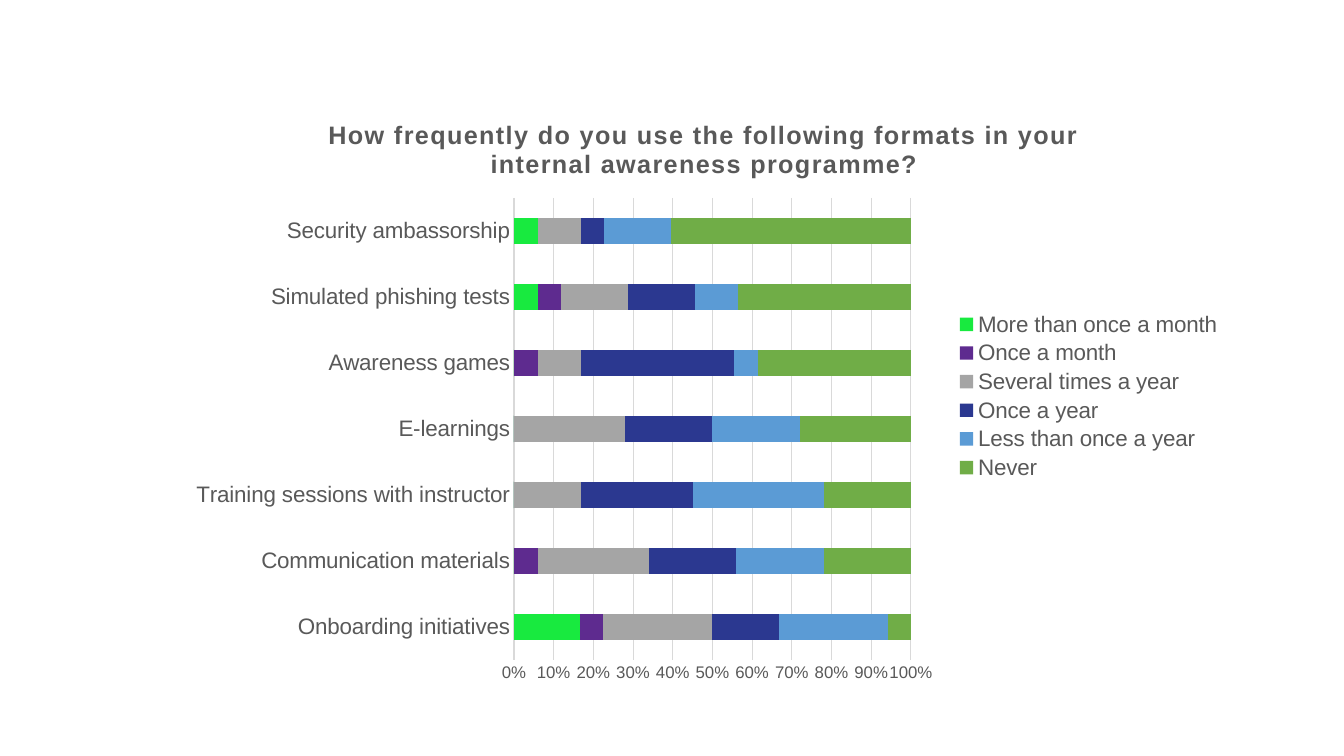
from lxml.etree import SubElement
from pptx import Presentation
from pptx.chart.data import CategoryChartData
from pptx.dml.color import RGBColor
from pptx.enum.chart import XL_CHART_TYPE, XL_LEGEND_POSITION, XL_TICK_MARK
from pptx.oxml.ns import qn
from pptx.util import Pt

GREY_TEXT = RGBColor(0x59, 0x59, 0x59)
GREY_LINE = RGBColor(0xD9, 0xD9, 0xD9)
FONT = "Arial"

QUESTION = "How frequently do you use the following formats in your internal awareness programme?"
FORMATS = [
    "Onboarding initiatives",
    "Communication materials",
    "Training sessions with instructor",
    "E-learnings",
    "Awareness games",
    "Simulated phishing tests",
    "Security ambassorship",
]
FREQUENCIES = [
    ("More than once a month", RGBColor(0x18, 0xEA, 0x3F), (17, 0, 0, 0, 0, 6, 6)),
    ("Once a month", RGBColor(0x5E, 0x2B, 0x8F), (6, 6, 0, 0, 6, 6, 0)),
    ("Several times a year", RGBColor(0xA5, 0xA5, 0xA5), (28, 28, 17, 28, 11, 17, 11)),
    ("Once a year", RGBColor(0x2B, 0x38, 0x90), (17, 22, 28, 22, 39, 17, 6)),
    ("Less than once a year", RGBColor(0x5B, 0x9B, 0xD5), (28, 22, 33, 22, 6, 11, 17)),
    ("Never", RGBColor(0x70, 0xAD, 0x47), (6, 22, 22, 28, 39, 44, 61)),
]

# Lengths in px: left, top, width, height
SLIDE_SIZE = (1344, 756)
CHART_BOX = (175, 97, 1058, 598)
PLOT_BOX = (514, 198, 397, 462)
PX_PER_INCH = 100.8


def px(length):
    return round(length * 914400 / PX_PER_INCH)


def style_font(font, size, color=GREY_TEXT, bold=False):
    font.name = FONT
    font.size = Pt(size)
    font.bold = bold
    font.color.rgb = color


def write_text(frame, text, size=18, color=GREY_TEXT, bold=False, spacing=0):
    """Put one run in the frame; spacing is in hundredths of a point."""
    run = frame.paragraphs[0].add_run()
    run.text = text
    style_font(run.font, size, color, bold)
    run._r.get_or_add_rPr().set("spc", str(spacing))


def style_line(line):
    line.color.rgb = GREY_LINE
    line.width = Pt(0.75)


def place_plot(chart):
    """Fix the inner plot area as fractions of the chart box."""
    left, top, width, height = CHART_BOX
    plot_left, plot_top, plot_width, plot_height = PLOT_BOX
    settings = [
        ("layoutTarget", "inner"), ("xMode", "edge"), ("yMode", "edge"),
        ("x", (plot_left - left) / width), ("y", (plot_top - top) / height),
        ("w", plot_width / width), ("h", plot_height / height),
    ]
    plot_area = chart._chartSpace.chart.plotArea
    for old_layout in plot_area.findall(qn("c:layout")):
        plot_area.remove(old_layout)
    layout = SubElement(plot_area, qn("c:layout"))
    plot_area.insert(0, layout)
    manual = SubElement(layout, qn("c:manualLayout"))
    for tag, value in settings:
        SubElement(manual, qn(f"c:{tag}")).set("val", str(value))


def add_frequency_chart(slide):
    answers = CategoryChartData(number_format="0")
    answers.categories = FORMATS
    for frequency, _, shares in FREQUENCIES:
        answers.add_series(frequency, shares)
    chart = slide.shapes.add_chart(
        XL_CHART_TYPE.BAR_STACKED_100, *map(px, CHART_BOX), answers).chart
    style_font(chart.font, 10)

    chart.has_title = True
    write_text(chart.chart_title.text_frame, QUESTION, size=18, bold=True, spacing=100)
    chart.chart_title.include_in_layout = False

    bars = chart.plots[0]
    bars.gap_width = 150
    bars.overlap = 100
    bars.vary_by_categories = False
    for series, (_, color, _) in zip(bars.series, FREQUENCIES):
        series.format.fill.solid()
        series.format.fill.fore_color.rgb = color

    format_axis, share_axis = chart.category_axis, chart.value_axis
    for axis, size in ((format_axis, 16), (share_axis, 12)):
        axis.major_tick_mark = axis.minor_tick_mark = XL_TICK_MARK.NONE
        style_font(axis.tick_labels.font, size)
    style_line(format_axis.format.line)
    share_axis.format.line.fill.background()
    share_axis.has_major_gridlines = True
    style_line(share_axis.major_gridlines.format.line)
    share_axis.minimum_scale, share_axis.maximum_scale = 0, 1
    share_axis.major_unit = 0.1
    share_axis.tick_labels.number_format = "0%"
    share_axis.tick_labels.number_format_is_linked = False

    chart.has_legend = True
    chart.legend.position = XL_LEGEND_POSITION.RIGHT
    chart.legend.include_in_layout = False
    style_font(chart.legend.font, 16)
    place_plot(chart)


def main():
    deck = Presentation()
    deck.slide_width, deck.slide_height = map(px, SLIDE_SIZE)
    add_frequency_chart(deck.slides.add_slide(deck.slide_layouts[6]))
    deck.save("out.pptx")


if __name__ == "__main__":
    main()
